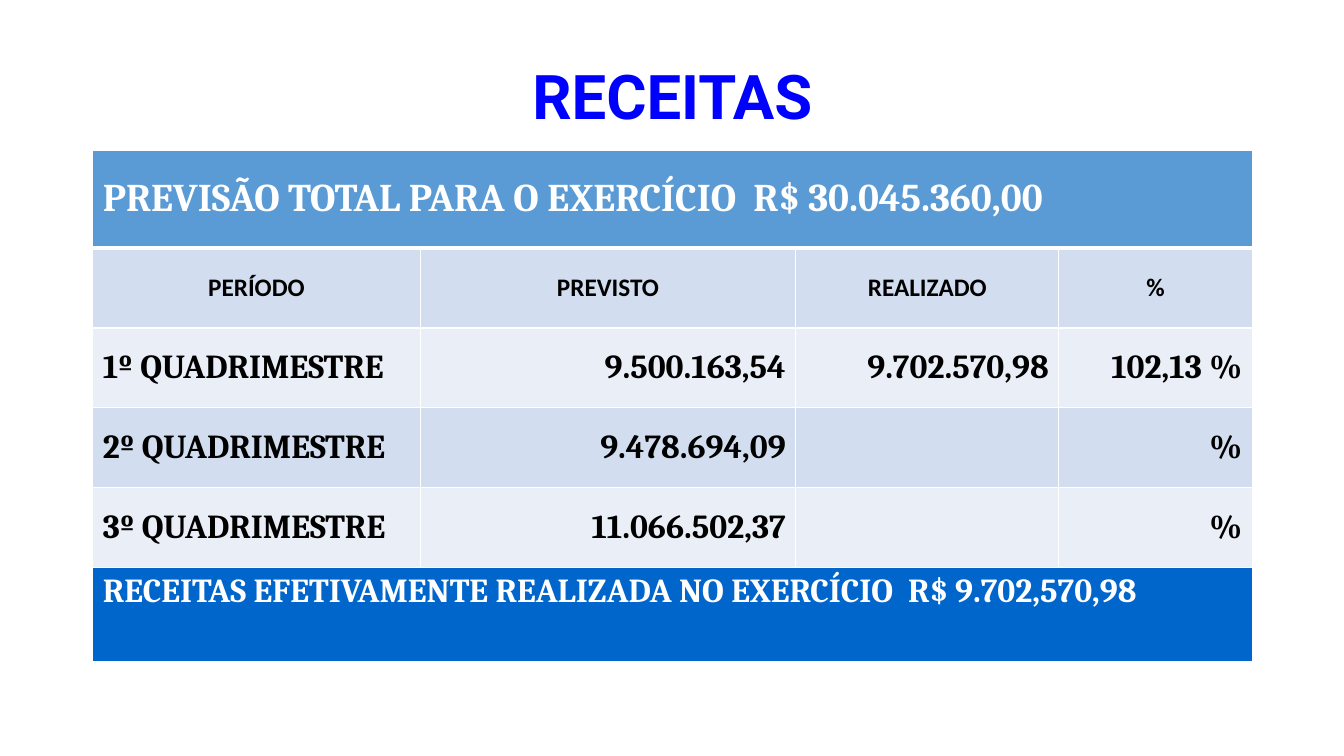
from dataclasses import dataclass

import pptx
import pptx.dml.color
import pptx.enum.text
import pptx.oxml
import pptx.oxml.ns
import pptx.util
from pptx.util import Inches

ALIGN = pptx.enum.text.PP_ALIGN
ANCHOR = pptx.enum.text.MSO_ANCHOR


@dataclass(frozen=True)
class Theme:
    title: str = "0000FF"
    header: str = "5B9BD5"
    band_dark: str = "D2DEEF"
    band_light: str = "EAEFF7"
    footer: str = "0066CC"
    white: str = "FFFFFF"
    black: str = "000000"
    title_font: str = "Roboto"
    label_font: str = "Calibri"
    body_font: str = "Cambria"
    title_size: int = 44
    header_size: int = 28
    body_size: int = 24
    label_size: int = 18
    line: int = 1
    thick_line: int = 3


THEME = Theme()

COL_WIDTHS = [3.25, 3.73, 2.61, 1.92]
ROW_HEIGHTS = [0.97, 0.79, 0.79, 0.79, 0.79, 0.93]
FORECAST = "PREVISÃO TOTAL PARA O EXERCÍCIO  R$ 30.045.360,00"
LABELS = ["PERÍODO", "PREVISTO", "REALIZADO", "%"]
PERIODS = [
    ["1º QUADRIMESTRE", "9.500.163,54", "9.702.570,98", "102,13 %"],
    ["2º QUADRIMESTRE", "9.478.694,09", "", "%"],
    ["3º QUADRIMESTRE", "11.066.502,37", "", "%"],
]
REALIZED = "RECEITAS EFETIVAMENTE REALIZADA NO EXERCÍCIO  R$ 9.702,570,98"


def rgb(value):
    return pptx.dml.color.RGBColor.from_string(value)


def write(tf, text, font, size, color, align):
    p = tf.paragraphs[0]
    p.alignment = align
    if text:
        r = p.add_run()
        r.text = text
        r.font.name = font
        r.font.size = pptx.util.Pt(size)
        r.font.bold = True
        r.font.color.rgb = rgb(color)
    return p


def set_borders(cell, top, bottom):
    """Draw white borders; they must precede the fill in the cell's XML."""
    widths = {"L": THEME.line, "R": THEME.line, "T": top, "B": bottom}
    for i, (side, width) in enumerate(widths.items()):
        ln = pptx.oxml.parse_xml(
            f'<a:ln{side} {pptx.oxml.ns.nsdecls("a")} w="{pptx.util.Pt(width)}">'
            f'<a:solidFill><a:srgbClr val="{THEME.white}"/></a:solidFill></a:ln{side}>'
        )
        cell._tc.get_or_add_tcPr().insert(i, ln)


def fill_cell(cell, text, fill, font, size, color, align=ALIGN.LEFT, anchor=ANCHOR.MIDDLE):
    cell.fill.solid()
    cell.fill.fore_color.rgb = rgb(fill)
    cell.vertical_anchor = anchor
    write(cell.text_frame, text, font, size, color, align)


def add_title(s, left, top, width, height):
    sp = s.shapes.add_textbox(Inches(left), Inches(top), Inches(width), Inches(height))
    tf = sp.text_frame
    tf.word_wrap = True
    tf.vertical_anchor = ANCHOR.MIDDLE
    p = write(tf, "RECEITAS", THEME.title_font, THEME.title_size, THEME.title, ALIGN.CENTER)
    p.line_spacing = 0.9


def add_revenue_table(s, left, top, width, height):
    table = s.shapes.add_table(
        len(ROW_HEIGHTS), len(COL_WIDTHS),
        Inches(left), Inches(top), Inches(width), Inches(height),
    ).table
    table.first_row = table.horz_banding = False
    for col, share in zip(table.columns, COL_WIDTHS):
        col.width = Inches(width * share / sum(COL_WIDTHS))
    for row, share in zip(table.rows, ROW_HEIGHTS):
        row.height = Inches(height * share / sum(ROW_HEIGHTS))

    last_row, last_col = len(ROW_HEIGHTS) - 1, len(COL_WIDTHS) - 1
    for row in (0, last_row):
        table.cell(row, 0).merge(table.cell(row, last_col))

    fill_cell(table.cell(0, 0), FORECAST, THEME.header,
              THEME.body_font, THEME.header_size, THEME.white)
    for c, label in enumerate(LABELS):
        fill_cell(table.cell(1, c), label, THEME.band_dark,
                  THEME.label_font, THEME.label_size, THEME.black, ALIGN.CENTER)
    for i, period in enumerate(PERIODS):
        band = THEME.band_dark if i % 2 else THEME.band_light
        for c, text in enumerate(period):
            fill_cell(table.cell(i + 2, c), text, band, THEME.body_font, THEME.body_size,
                      THEME.black, ALIGN.RIGHT if c else ALIGN.LEFT)
    fill_cell(table.cell(last_row, 0), REALIZED, THEME.footer,
              THEME.body_font, THEME.body_size, THEME.white, anchor=ANCHOR.TOP)

    for i, row in enumerate(table.rows):
        for cell in row.cells:
            set_borders(cell,
                        top=THEME.thick_line if i == 1 else THEME.line,
                        bottom=THEME.thick_line if i == 0 else THEME.line)


def main():
    prs = pptx.Presentation()
    prs.slide_width, prs.slide_height = Inches(13.33), Inches(7.5)
    s = prs.slides.add_slide(prs.slide_layouts[6])
    add_title(s, 0.92, 0.4, 11.5, 1.18)
    add_revenue_table(s, 0.92, 1.49, 11.5, 5.07)
    prs.save("out.pptx")


if __name__ == "__main__":
    main()
